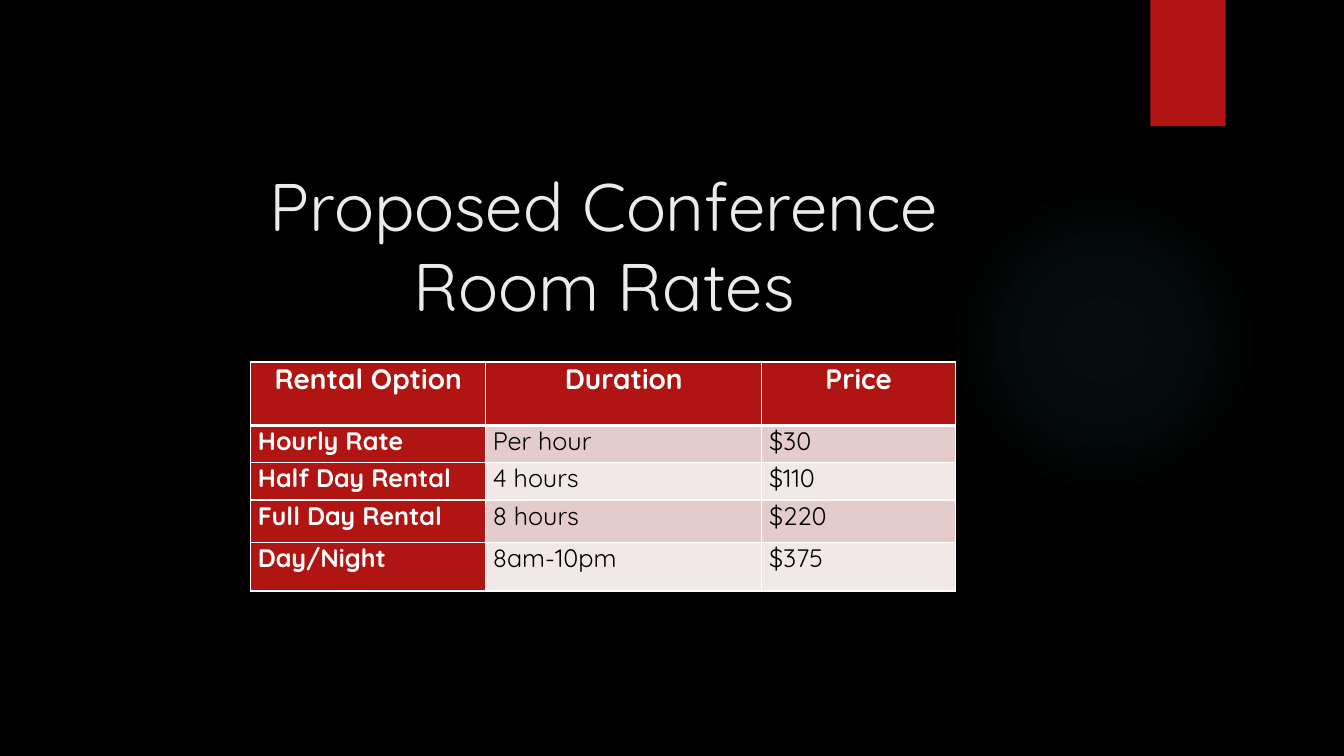
"""Build the slide with the proposed conference room rates."""
from lxml import etree
from pptx import Presentation
from pptx.dml.color import RGBColor
from pptx.enum.shapes import MSO_SHAPE
from pptx.enum.text import MSO_ANCHOR, PP_ALIGN
from pptx.oxml import parse_xml
from pptx.util import Cm, Pt

TITLE = "Proposed Conference \vRoom Rates "
RATES = [
    ("Rental Option", "Duration", "Price"),
    ("Hourly Rate", "Per hour", "$30"),
    ("Half Day Rental", "4 hours", "$110"),
    ("Full Day Rental", "8 hours", "$220"),
    ("Day/Night", "8am-10pm", "$375"),
]
COL_WIDTHS = (5.92, 6.96, 4.88)
ROW_HEIGHTS = (1.6, 0.94, 0.94, 1.07, 1.22)
GLOW_STOPS = ((0, 7), (36, 6), (69, 0))

FONT = "Quicksand"
BLACK = RGBColor(0x00, 0x00, 0x00)
WHITE = RGBColor(0xFF, 0xFF, 0xFF)
TITLE_GREY = RGBColor(0xEB, 0xEB, 0xEB)
RED = RGBColor(0xB0, 0x15, 0x13)
TEAL = RGBColor(0x50, 0xB9, 0xC1)
BANDS = (RGBColor(0xE4, 0xCC, 0xCC), RGBColor(0xF2, 0xE8, 0xE7))
CENTER, LEFT = PP_ALIGN.CENTER, PP_ALIGN.LEFT
TOP = MSO_ANCHOR.TOP
ELLIPSE, RECTANGLE = MSO_SHAPE.OVAL, MSO_SHAPE.RECTANGLE
A = "http://schemas.openxmlformats.org/drawingml/2006/main"


def add_plain_shape(s, kind, left, top, width, height, color):
    sp = s.shapes.add_shape(kind, Cm(left), Cm(top), Cm(width), Cm(height))
    sp.shadow.inherit = False
    sp.fill.solid()
    sp.fill.fore_color.rgb = color
    sp.line.fill.background()
    return sp


def set_glow(sp):
    stops = "".join(
        f'<a:gs pos="{pos * 1000}"><a:srgbClr val="{TEAL}">'
        f'<a:alpha val="{alpha * 1000}"/></a:srgbClr></a:gs>'
        for pos, alpha in GLOW_STOPS)
    grad = parse_xml(
        f'<a:gradFill xmlns:a="{A}" rotWithShape="1"><a:gsLst>{stops}</a:gsLst>'
        '<a:path path="circle"><a:fillToRect l="50000" t="50000" r="50000" b="50000"/>'
        '</a:path></a:gradFill>')
    solid = sp.element.spPr.find(f"{{{A}}}solidFill")
    solid.getparent().replace(solid, grad)


def set_text(p, text, size, color, bold, align):
    p.text = text
    p.alignment = align
    for r in p.runs:
        r.font.name = FONT
        r.font.size = Pt(size)
        r.font.bold = bold
        r.font.color.rgb = color


def set_borders(cell, top, bottom):
    tcPr = cell._tc.get_or_add_tcPr()
    sides = (("lnL", 1), ("lnR", 1), ("lnT", top), ("lnB", bottom))
    for i, (side, width) in enumerate(sides):
        ln = etree.Element(f"{{{A}}}{side}", w=str(Pt(width)))
        fill = etree.SubElement(ln, f"{{{A}}}solidFill")
        etree.SubElement(fill, f"{{{A}}}srgbClr", val=str(WHITE))
        tcPr.insert(i, ln)


def add_rates_table(s):
    table = s.shapes.add_table(
        len(RATES), len(COL_WIDTHS), Cm(6.32), Cm(9.12),
        Cm(sum(COL_WIDTHS)), Cm(sum(ROW_HEIGHTS))).table
    for column, width in zip(table.columns, COL_WIDTHS):
        column.width = Cm(width)
    for i, (values, height) in enumerate(zip(RATES, ROW_HEIGHTS)):
        table.rows[i].height = Cm(height)
        for j, value in enumerate(values):
            cell = table.cell(i, j)
            header = i == 0
            strong = header or j == 0
            cell.margin_left = cell.margin_right = Cm(0.18)
            cell.margin_top = cell.margin_bottom = 0
            cell.vertical_anchor = TOP
            cell.fill.solid()
            cell.fill.fore_color.rgb = RED if strong else BANDS[(i - 1) % 2]
            set_borders(cell, 3 if i == 1 else 1, 3 if header else 1)
            set_text(cell.text_frame.paragraphs[0], value, 20 if header else 18,
                     WHITE if strong else BLACK, strong, CENTER if header else LEFT)


def main():
    prs = Presentation()
    prs.slide_width, prs.slide_height = Cm(33.87), Cm(19.05)
    s = prs.slides.add_slide(prs.slide_layouts[6])
    s.background.fill.solid()
    s.background.fill.fore_color.rgb = BLACK

    set_glow(add_plain_shape(s, ELLIPSE, 23.9, 4.65, 7.82, 7.82, TEAL))
    add_plain_shape(s, RECTANGLE, 28.99, 0, 1.9, 3.18, RED)

    tf = s.shapes.add_textbox(Cm(3.2), Cm(4.01), Cm(24.51), Cm(5.51)).text_frame
    tf.word_wrap = True
    tf.vertical_anchor = TOP
    set_text(tf.paragraphs[0], TITLE, 48, TITLE_GREY, False, CENTER)

    add_rates_table(s)
    prs.save("out.pptx")


if __name__ == "__main__":
    main()
